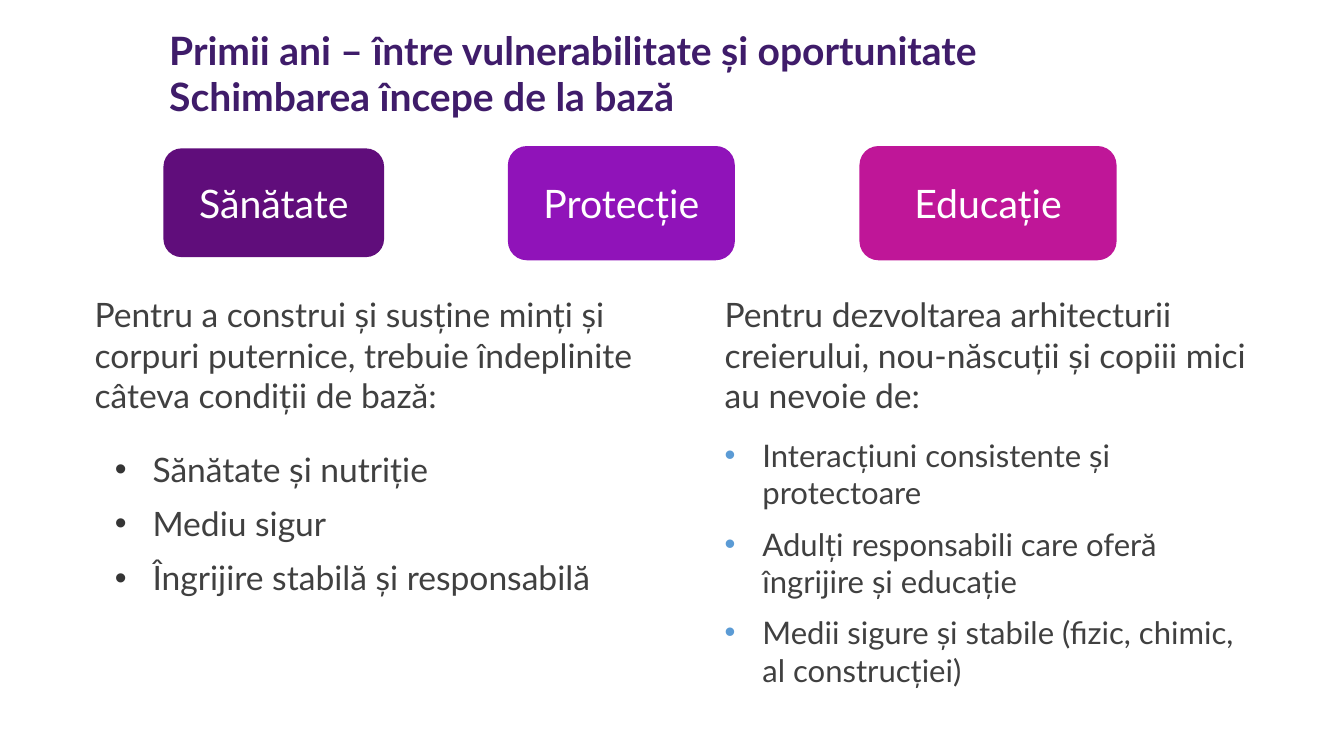
from lxml.etree import SubElement
from pptx import Presentation
from pptx.dml.color import RGBColor
from pptx.enum.shapes import MSO_SHAPE
from pptx.enum.text import MSO_ANCHOR, MSO_AUTO_SIZE, PP_ALIGN
from pptx.oxml.ns import qn
from pptx.util import Cm, Pt

FONT = "Lato"
COLORS = {
    "title": "3F1C6A",
    "body": "404040",
    "white": "FFFFFF",
    "health": "600D7B",
    "protection": "9013B9",
    "education": "BF1698",
    "dark_bullet": "353535",
    "blue_bullet": "5B9BD5",
}
INDENT = Cm(0.95)

TITLE = ["Primii ani – între vulnerabilitate și oportunitate",
         "Schimbarea începe de la bază"]

# Label, colour, box (left, top, width, height in cm)
PILLARS = [
    ("Sănătate", "health", (4.12, 3.74, 5.56, 2.74)),
    ("Protecție", "protection", (12.8, 3.68, 5.72, 2.88)),
    ("Educație", "education", (21.66, 3.68, 6.48, 2.88)),
]


def format_text(frame, lines, size, color, bold=False, align=PP_ALIGN.LEFT, before=0):
    frame.text = "\n".join(lines)
    frame.word_wrap = True
    frame.auto_size = MSO_AUTO_SIZE.NONE
    for paragraph in frame.paragraphs:
        paragraph.alignment = align
        paragraph.line_spacing = 1.0
        paragraph.space_before = Pt(before)
        for run in paragraph.runs:
            run.font.name = FONT
            run.font.size = Pt(size)
            run.font.bold = bold
            run.font.color.rgb = RGBColor.from_string(COLORS[color])


def place(part, box):
    part.left, part.top, part.width, part.height = (Cm(length) for length in box)


def set_bullets(frame, color):
    for paragraph in frame.paragraphs:
        properties = paragraph._p.get_or_add_pPr()
        properties.set("marL", str(INDENT))
        properties.set("indent", str(-INDENT))
        bullet_color = SubElement(properties, qn("a:buClr"))
        SubElement(bullet_color, qn("a:srgbClr"), val=COLORS[color])
        SubElement(properties, qn("a:buFont"), typeface="Arial")
        SubElement(properties, qn("a:buChar"), char="•")


def fill_title(title, box):
    place(title, box)
    title.text_frame.vertical_anchor = MSO_ANCHOR.TOP
    format_text(title.text_frame, TITLE, 27.9, "title", bold=True)


def add_pillar(slide, label, color, box):
    pillar = slide.shapes.add_shape(
        MSO_SHAPE.ROUNDED_RECTANGLE, *(Cm(length) for length in box))
    pillar.shadow.inherit = False
    pillar.fill.solid()
    pillar.fill.fore_color.rgb = RGBColor.from_string(COLORS[color])
    pillar.line.fill.background()
    pillar.text_frame.vertical_anchor = MSO_ANCHOR.MIDDLE
    format_text(pillar.text_frame, [label], 28, "white", align=PP_ALIGN.CENTER)


def fill_column(intro, needs, box, intro_text, need_lines, size, bullet_color,
                list_left, list_top):
    """Intro in the upper part of the box, list offset from its top left corner."""
    left, top, width, height = box
    place(intro, (left, top, width, 5.13))
    intro.text_frame.vertical_anchor = MSO_ANCHOR.BOTTOM
    format_text(intro.text_frame, [intro_text], 24, "body", before=10)

    place(needs, (left + list_left, top + list_top, width - list_left, height - list_top))
    needs.text_frame.vertical_anchor = MSO_ANCHOR.TOP
    format_text(needs.text_frame, need_lines, size, "body", before=10)
    set_bullets(needs.text_frame, bullet_color)


def main():
    presentation = Presentation()
    presentation.slide_width = Cm(33.87)
    presentation.slide_height = Cm(19.05)
    comparison_layout = presentation.slide_layouts[4]
    slide = presentation.slides.add_slide(comparison_layout)
    holders = slide.placeholders

    # Title
    fill_title(slide.shapes.title, (4.01, 0.53, 27.46, 3.28))

    # Left column: basic conditions
    fill_column(
        holders[1], holders[2], (2.13, 5.46, 14.45, 10.95),
        "Pentru a construi și susține minți și corpuri puternice, "
        "trebuie îndeplinite câteva condiții de bază:",
        ["Sănătate și nutriție", "Mediu sigur", "Îngrijire stabilă și responsabilă"],
        24, "dark_bullet", list_left=0.51, list_top=5.72)

    # Right column: needs of small children
    fill_column(
        holders[3], holders[4], (18.01, 5.46, 13.94, 10.92),
        "Pentru dezvoltarea arhitecturii creierului, "
        "nou-născuții și copiii mici au nevoie de:",
        ["Interacțiuni consistente și protectoare",
         "Adulți responsabili care oferă îngrijire și educație",
         "Medii sigure și stabile (fizic, chimic, al construcției)"],
        22.2, "blue_bullet", list_left=0, list_top=5.41)

    # Three pillars
    for label, color, box in PILLARS:
        add_pillar(slide, label, color, box)

    presentation.save("out.pptx")


if __name__ == "__main__":
    main()
